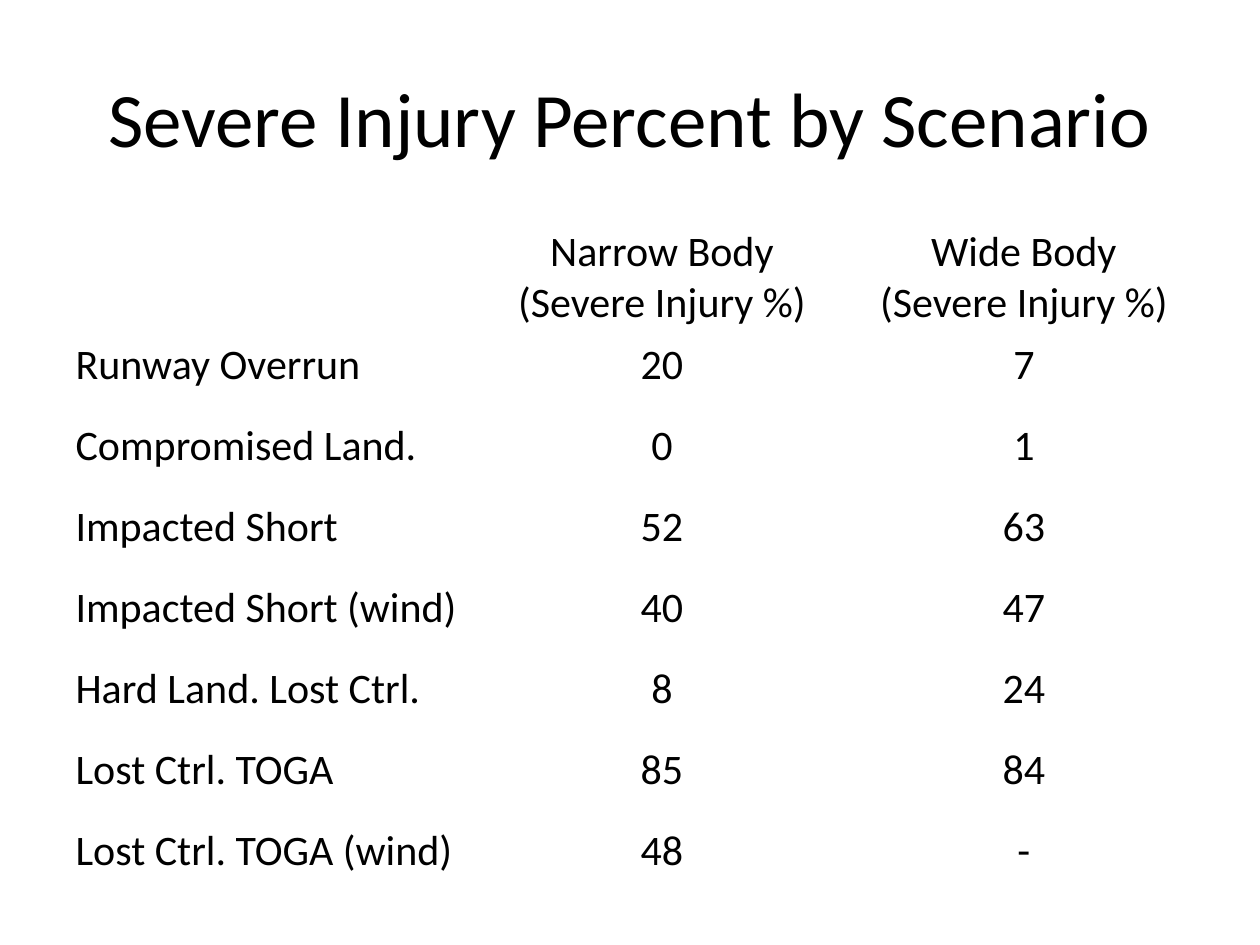
from pptx import Presentation
from pptx.dml.color import RGBColor
from pptx.enum.text import MSO_ANCHOR, PP_ALIGN
from pptx.util import Pt

PX = 914400 // 126  # EMU per px
BLACK = RGBColor(0, 0, 0)
LEFT, CENTER = PP_ALIGN.LEFT, PP_ALIGN.CENTER
MIDDLE = MSO_ANCHOR.MIDDLE

COL_WIDTHS = [410, 378, 346]
ROW_HEIGHT = 81
ROWS = [
    ("", "Narrow Body\v(Severe Injury %)", "Wide Body\v(Severe Injury %)"),
    ("Runway Overrun", "20", "7"),
    ("Compromised Land.", "0", "1"),
    ("Impacted Short", "52", "63"),
    ("Impacted Short (wind)", "40", "47"),
    ("Hard Land. Lost Ctrl.", "8", "24"),
    ("Lost Ctrl. TOGA", "85", "84"),
    ("Lost Ctrl. TOGA (wind)", "48", "-"),
]


def write(tf, text, size, align):
    tf.text = text
    p = tf.paragraphs[0]
    p.alignment = align
    p.font.name = "Calibri"
    p.font.size = Pt(size)
    p.font.color.rgb = BLACK


prs = Presentation()
prs.slide_width, prs.slide_height = 1260 * PX, 945 * PX
s = prs.slides.add_slide(prs.slide_layouts[6])

# Title
sp = s.shapes.add_textbox(63 * PX, 38 * PX, 1134 * PX, 157 * PX)
tf = sp.text_frame
tf.word_wrap = True
tf.vertical_anchor = MIDDLE
write(tf, "Severe Injury Percent by Scenario", 44, CENTER)

# Injury table
table = s.shapes.add_table(
    len(ROWS), len(COL_WIDTHS), 63 * PX, 220 * PX,
    sum(COL_WIDTHS) * PX, len(ROWS) * ROW_HEIGHT * PX).table
table.first_row = False
table.horz_banding = False
for column, width in zip(table.columns, COL_WIDTHS):
    column.width = width * PX
for i, row in enumerate(ROWS):
    table.rows[i].height = ROW_HEIGHT * PX
    for j, text in enumerate(row):
        cell = table.cell(i, j)
        cell.fill.background()
        write(cell.text_frame, text, 24, CENTER if j else LEFT)

prs.save("out.pptx")
